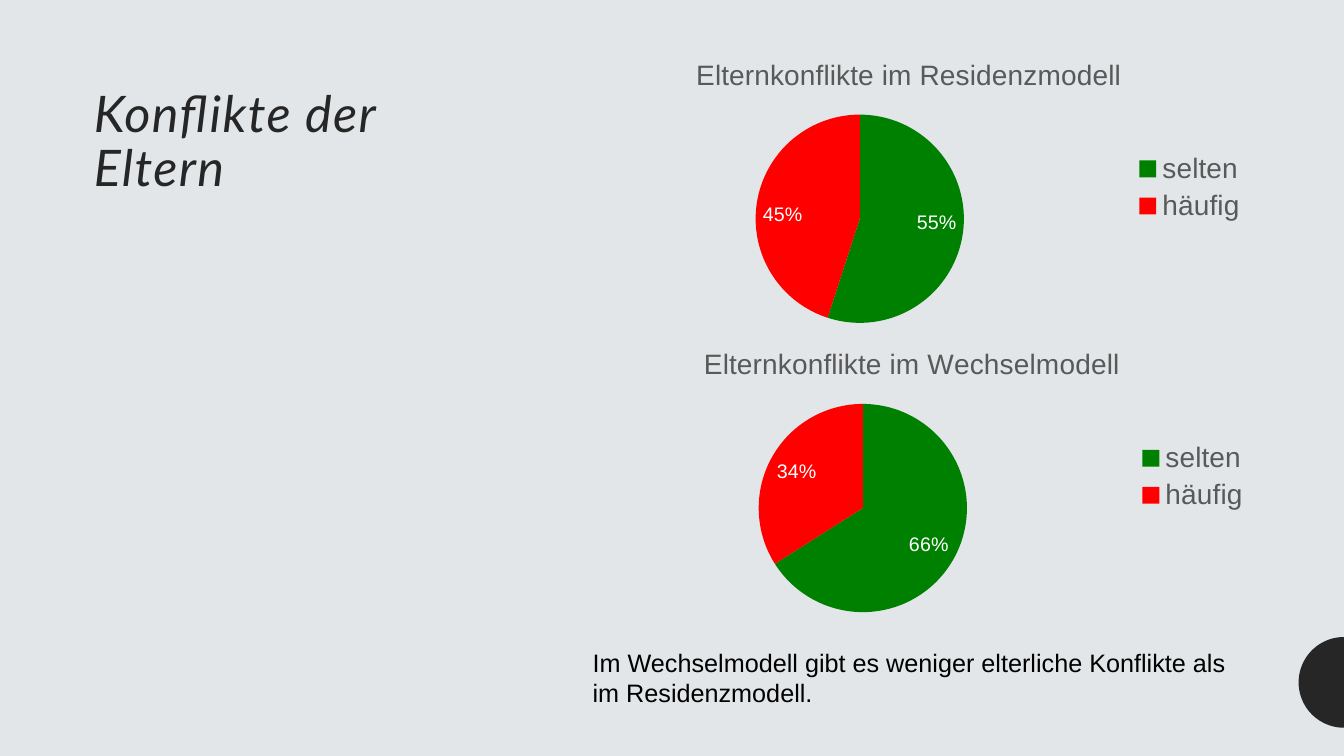
from dataclasses import dataclass
from math import cos, pi, sin

from lxml.etree import SubElement
from pptx import Presentation
from pptx.chart.data import CategoryChartData
from pptx.dml.color import RGBColor
from pptx.enum.chart import XL_CHART_TYPE, XL_LABEL_POSITION, XL_LEGEND_POSITION
from pptx.enum.text import MSO_ANCHOR
from pptx.oxml.ns import qn
from pptx.util import Inches, Pt


@dataclass(frozen=True)
class Theme:
    background: RGBColor = RGBColor(0xE2, 0xE6, 0xE8)
    dark: RGBColor = RGBColor(0x26, 0x26, 0x26)
    black: RGBColor = RGBColor(0, 0, 0)
    white: RGBColor = RGBColor(0xFF, 0xFF, 0xFF)
    grey: RGBColor = RGBColor(0x59, 0x59, 0x59)
    rare: RGBColor = RGBColor(0, 0x80, 0)
    frequent: RGBColor = RGBColor(0xFF, 0, 0)
    title_font: str = "Lato"
    body_font: str = "Arial"
    title_size: int = 36
    chart_title_size: int = 20
    legend_size: int = 20
    label_size: int = 14
    body_size: int = 18


THEME = Theme()
SLIDE_WIDTH = 13.33
CHART_SIZE = (6.91, 2.92)
PIE_LAYOUT = {"x": 0.28, "y": 0.213, "w": 0.299, "h": 0.787}
CHARTS = [
    ("Elternkonflikte im Residenzmodell", 5.56, 0.4, (0.55, 0.45)),
    ("Elternkonflikte im Wechselmodell", 5.59, 3.27, (0.66, 0.34)),
]


def set_font(font, name, size, color):
    font.name = name
    font.size = Pt(size)
    font.color.rgb = color
    font.bold = False


def add_half_circle(s, cx, cy, radius, steps=48):
    angles = [pi / 2 + pi * i / steps for i in range(steps + 1)]
    points = [(Inches(cx + radius * cos(a)), Inches(cy + radius * sin(a))) for a in angles]
    builder = s.shapes.build_freeform(*points[0])
    builder.add_line_segments(points[1:], close=True)
    sp = builder.convert_to_shape()
    sp.shadow.inherit = False
    sp.fill.solid()
    sp.fill.fore_color.rgb = THEME.dark
    sp.line.fill.background()


def format_title(s, text):
    sp = s.shapes.title
    sp.left, sp.top, sp.width, sp.height = map(Inches, (0.83, 0.83, 4.19, 5.2))
    tf = sp.text_frame
    tf.word_wrap = True
    tf.vertical_anchor = MSO_ANCHOR.TOP
    p = tf.paragraphs[0]
    p.line_spacing = 0.9
    r = p.add_run()
    r.text = text
    set_font(r.font, THEME.title_font, THEME.title_size, THEME.dark)
    r.font.italic = True
    r._r.get_or_add_rPr().set("spc", "100")
    p.alignment = 1


def add_text(s, text, x, y, w, h):
    tf = s.shapes.add_textbox(*map(Inches, (x, y, w, h))).text_frame
    tf.word_wrap = True
    p = tf.paragraphs[0]
    p.text = text
    set_font(p.font, THEME.body_font, THEME.body_size, THEME.black)


def place_plot(chart):
    plot_area = chart._chartSpace.chart.plotArea
    for old in plot_area.findall(qn("c:layout")):
        plot_area.remove(old)
    layout = SubElement(plot_area, qn("c:layout"))
    plot_area.insert(0, layout)
    manual = SubElement(layout, qn("c:manualLayout"))
    settings = {"layoutTarget": "inner", "xMode": "edge", "yMode": "edge", **PIE_LAYOUT}
    for tag, value in settings.items():
        SubElement(manual, qn(f"c:{tag}")).set("val", str(value))


def add_pie(s, title, x, y, values):
    data = CategoryChartData(number_format="0%")
    data.categories = ["selten", "häufig"]
    data.add_series("Series 1", values)
    frame = s.shapes.add_chart(XL_CHART_TYPE.PIE, *map(Inches, (x, y, *CHART_SIZE)), data)
    chart = frame.chart
    chart.font.name = THEME.body_font

    chart.has_title = True
    p = chart.chart_title.text_frame.paragraphs[0]
    p.text = title
    set_font(p.font, THEME.body_font, THEME.chart_title_size, THEME.grey)

    chart.has_legend = True
    chart.legend.position = XL_LEGEND_POSITION.RIGHT
    chart.legend.include_in_layout = False
    set_font(chart.legend.font, THEME.body_font, THEME.legend_size, THEME.grey)

    plot = chart.plots[0]
    plot.vary_by_categories = True
    for i, color in enumerate((THEME.rare, THEME.frequent)):
        fill = plot.series[0].points[i].format.fill
        fill.solid()
        fill.fore_color.rgb = color
    labels = plot.series[0].data_labels
    labels.show_value = True
    labels.number_format = "0%"
    labels.number_format_is_linked = False
    labels.position = XL_LABEL_POSITION.INSIDE_END
    set_font(labels.font, THEME.body_font, THEME.label_size, THEME.white)
    place_plot(chart)


def main():
    prs = Presentation()
    prs.slide_width, prs.slide_height = Inches(SLIDE_WIDTH), Inches(7.5)
    s = prs.slides.add_slide(prs.slide_layouts[5])
    s.background.fill.solid()
    s.background.fill.fore_color.rgb = THEME.background
    add_half_circle(s, SLIDE_WIDTH, 6.77, 0.45)
    format_title(s, "Konflikte der Eltern")
    for chart in CHARTS:
        add_pie(s, *chart)
    add_text(
        s,
        "Im Wechselmodell gibt es weniger elterliche Konflikte als im Residenzmodell.",
        5.78, 6.37, 6.53, 0.71,
    )
    prs.save("out.pptx")


if __name__ == "__main__":
    main()
